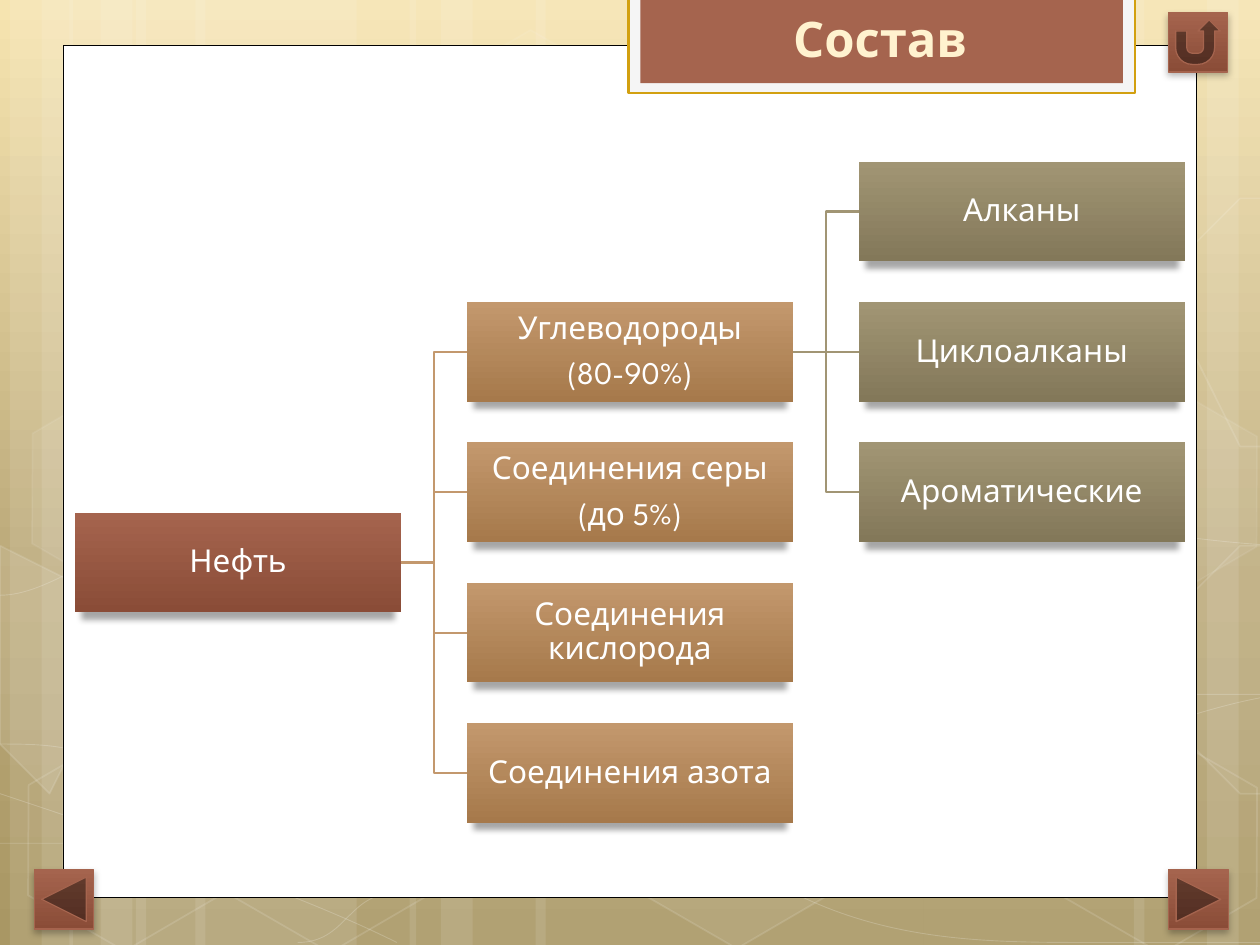
from lxml import etree
from pptx import Presentation
from pptx.dml.color import RGBColor
from pptx.enum.shapes import MSO_CONNECTOR, MSO_SHAPE
from pptx.enum.text import MSO_ANCHOR, MSO_AUTO_SIZE, PP_ALIGN
from pptx.oxml.ns import qn
from pptx.util import Cm, Pt

RECT = MSO_SHAPE.RECTANGLE
HEXAGON = MSO_SHAPE.HEXAGON
NEXT = MSO_SHAPE.ACTION_BUTTON_FORWARD_OR_NEXT
BACK = MSO_SHAPE.ACTION_BUTTON_BACK_OR_PREVIOUS
RETURN = MSO_SHAPE.ACTION_BUTTON_RETURN
ELBOW, STRAIGHT = MSO_CONNECTOR.ELBOW, MSO_CONNECTOR.STRAIGHT
CENTER, MIDDLE = PP_ALIGN.CENTER, MSO_ANCHOR.MIDDLE
LEFT_SITE, RIGHT_SITE = 1, 3
TITLE_ONLY = 5

RUST = ("A5644E", "8A4C37")
COPPER = ("C3986D", "A6794B")
OLIVE = ("A19574", "837859")
WHITE = "FFFFFF"

STRIPES = [(2.74, 4.45), (0.2, 1.27), (0.84, 2.11), (3.94, 4.45), (1.4, 1.27), (2.03, 2.11),
           (18.62, 4.45), (24.33, 1.27), (22.86, 2.11), (10.8, 7.82), (8.26, 1.27), (8.89, 2.11)]

CURVES = [
    [(0.18, 17.09), (1.55, 17.17), (2.92, 17.25), (4.83, 17.22), (6.73, 17.2), (9.09, 17.15),
     (11.63, 16.89), (14.17, 16.64), (17.78, 16.15), (20.12, 15.67), (22.43, 15.19),
     (24.82, 14.43), (25.58, 14)],
    [(0.18, 12.12), (0.91, 11.71), (1.65, 11.33), (3.07, 10.95), (4.52, 10.57), (6.58, 10.01),
     (8.81, 9.83), (11.07, 9.65), (13.82, 9.63), (16.61, 9.83), (19.41, 10.03),
     (24.05, 10.82), (25.58, 11.02)],
    [(0.15, 15.67), (3.23, 17.07), (6.27, 18.47), (8.48, 19.02)],
    [(0.18, 14.68), (0.97, 14.96), (1.78, 15.24), (3.25, 15.65), (4.72, 16.03), (6.93, 16.66),
     (9.07, 17.09), (11.18, 17.53), (13.84, 17.98), (15.95, 18.24), (18.06, 18.52),
     (20.32, 18.62), (21.67, 18.69), (22.99, 18.8), (23.34, 18.75), (24, 18.75),
     (24.66, 18.72), (25.12, 18.67), (25.58, 18.64)],
    [(6.15, 19.02), (6.6, 18.52), (7.06, 18.01), (7.67, 17.55), (8.28, 17.09), (9.14, 16.59),
     (9.86, 16.23), (10.57, 15.88), (11, 15.72), (11.94, 15.47), (12.85, 15.21),
     (14.55, 14.86), (15.44, 14.68), (16.36, 14.5), (16.48, 14.5), (17.27, 14.45),
     (18.06, 14.38), (19.3, 14.3), (20.17, 14.27), (21.06, 14.25), (22.5, 14.27),
     (22.5, 14.27), (22.5, 14.27), (24.21, 14.27), (24.21, 14.27), (24.66, 14.3),
     (25.1, 14.33), (25.55, 14.38)],
]

HEXAGONS = [(8.48, 0.91, 4, 8), (12.62, 14.96, 6, 12), (0.28, 15.01, 0, 12), (0.36, 7.92, 7, 8),
            (4.42, 15.04, 0, 12), (21.18, 15.06, 0, 12), (21.18, 7.98, 7, 8)]

CUT_HEXAGONS = [
    ([(0.2, 11.3), (0.48, 11.13), (2.44, 12.24), (2.41, 14.48), (0.51, 15.6), (0.2, 15.42)], 10),
    ([(23.52, 12.32), (25.43, 11.2), (25.63, 11.33), (25.63, 15.57), (25.45, 15.67),
      (23.52, 14.55)], 4),
    ([(23.52, 5.26), (25.43, 4.14), (25.65, 4.27), (25.63, 8.51), (25.45, 8.61),
      (23.52, 7.49)], 0),
]

FRACTIONS = [(["Углеводороды", "(80-90%)"], 1), (["Соединения серы", "(до 5%)"], 2),
             (["Соединения кислорода"], 3), (["Соединения азота"], 4)]
HYDROCARBONS = ["Алканы", "Циклоалканы", "Ароматические"]


def rgb(value):
    return RGBColor.from_string(value)


def set_alpha(parent, percent):
    clr = parent.find(".//" + qn("a:srgbClr"))
    etree.SubElement(clr, qn("a:alpha"), val=str(percent * 1000))


def set_gradient(fill, owner, stops):
    fill.gradient()
    fill.gradient_angle = 270
    gs_list = owner.find(".//" + qn("a:gsLst"))
    for gs in list(gs_list):
        gs_list.remove(gs)
    for pos, color in stops:
        gs = etree.SubElement(gs_list, qn("a:gs"), pos=str(pos * 1000))
        etree.SubElement(gs, qn("a:srgbClr"), val=color)


def add_text(tf, text, first=False, size=18, color=WHITE, bold=False, font="League Spartan",
             spacing=None, after=None):
    p = tf.paragraphs[0] if first else tf.add_paragraph()
    p.alignment = CENTER
    p.line_spacing = spacing
    p.space_after = after
    r = p.add_run()
    r.text = text
    r.font.name, r.font.size, r.font.bold = font, Pt(size), bold
    r.font.color.rgb = rgb(color)


class Deck:
    def __init__(self, prs):
        self.s = prs.slides.add_slide(prs.slide_layouts[TITLE_ONLY])

    def background(self, stops):
        set_gradient(self.s.background.fill, self.s.element, stops)

    def paint(self, sp, fill=None, alpha=100, line=None, width=1, line_alpha=100):
        sp.shadow.inherit = False
        if fill:
            sp.fill.solid()
            sp.fill.fore_color.rgb = rgb(fill)
            if alpha < 100:
                set_alpha(sp.element.spPr.find(qn("a:solidFill")), alpha)
        else:
            sp.fill.background()
        if line:
            sp.line.color.rgb = rgb(line)
            sp.line.width = Pt(width)
            if line_alpha < 100:
                set_alpha(sp.element.spPr.find(qn("a:ln")), line_alpha)
        else:
            sp.line.fill.background()
        return sp

    def shape(self, kind, x, y, w, h, **style):
        sp = self.s.shapes.add_shape(kind, Cm(x), Cm(y), Cm(w), Cm(h))
        return self.paint(sp, **style)

    def raised(self, kind, x, y, w, h, colors, alpha, blur, dist, scale=100, **style):
        sp = self.shape(kind, x, y, w, h, **style)
        set_gradient(sp.fill, sp.element.spPr, zip((0, 100), colors))
        effects = sp.element.spPr.find(qn("a:effectLst"))
        shadow = etree.SubElement(effects, qn("a:outerShdw"), blurRad=str(Pt(blur)),
                                  dist=str(Pt(dist)), dir="5400000", sx=str(scale * 1000),
                                  algn="b", rotWithShape="0")
        etree.SubElement(shadow, qn("a:srgbClr"), val="000000")
        set_alpha(shadow, alpha)
        return sp

    def outline(self, points, close, **style):
        fb = self.s.shapes.build_freeform(*points[0], scale=Cm(1))
        fb.add_line_segments(points[1:], close=close)
        return self.paint(fb.convert_to_shape(), **style)

    def curve(self, points, **style):
        sp = self.outline(points, False, **style)
        geometry = sp.element.spPr.find(".//" + qn("a:path"))
        lines = geometry.findall(qn("a:lnTo"))
        for i in range(0, len(lines), 3):
            bezier = etree.SubElement(geometry, qn("a:cubicBezTo"))
            for ln in lines[i:i + 3]:
                bezier.append(ln[0])
                geometry.remove(ln)

    def node(self, lines, col, row, colors):
        sp = self.raised(RECT, 1.51 + 7.9 * col, 3.26 + 2.83 * row, 6.58, 2.01, colors,
                         alpha=34, blur=3.5, dist=4, scale=96)
        tf = sp.text_frame
        tf.word_wrap = True
        tf.vertical_anchor = MIDDLE
        tf.margin_left = tf.margin_right = tf.margin_top = tf.margin_bottom = Cm(0.03)
        for i, line in enumerate(lines):
            add_text(tf, line, first=i == 0, spacing=0.9, after=Pt(6.3))
        return sp

    def branch(self, parent, child, color):
        kind = STRAIGHT if parent.top == child.top else ELBOW
        cn = self.s.shapes.add_connector(kind, 0, 0, 0, 0)
        cn.begin_connect(parent, RIGHT_SITE)
        cn.end_connect(child, LEFT_SITE)
        cn.line.color.rgb = rgb(color)
        cn.line.width = Pt(1.25)
        etree.SubElement(cn.element.spPr, qn("a:effectLst"))

    def title(self, text, x, y, w, h):
        sp = self.s.shapes.title
        sp.left, sp.top, sp.width, sp.height = Cm(x), Cm(y), Cm(w), Cm(h)
        tf = sp.text_frame
        tf.word_wrap = False
        tf.auto_size = MSO_AUTO_SIZE.SHAPE_TO_FIT_TEXT
        add_text(tf, text, first=True, size=28, color="FFF2CF", bold=True)
        sp.element.getparent().append(sp.element)

    def button(self, kind, x, y):
        self.raised(kind, x, y, 1.2, 1.2, RUST, alpha=28, blur=4, dist=2, line=RUST[0], width=0.75)


def main():
    prs = Presentation()
    prs.slide_width, prs.slide_height = Cm(25.4), Cm(19.05)
    deck = Deck(prs)

    deck.background([(0, "F6E4B0"), (62, "BAA878"), (100, "A99764")])
    for x, w in STRIPES:
        deck.shape(RECT, x, 0, w, 19.05, fill=WHITE, alpha=10)
    for points in CURVES:
        deck.curve(points, line=WHITE, width=0.5, line_alpha=20)
    for x, y, alpha, line_alpha in HEXAGONS:
        sp = deck.shape(HEXAGON, x, y, 4.45, 3.86, fill=WHITE if alpha else None, alpha=alpha,
                        line=WHITE, line_alpha=line_alpha)
        sp.adjustments[0] = 0.285
        sp.rotation = 30
    for points, alpha in CUT_HEXAGONS:
        deck.outline(points, True, fill=WHITE if alpha else None, alpha=alpha,
                     line=WHITE, line_alpha=12)

    deck.shape(RECT, 1.27, 0.91, 22.86, 17.18, fill=WHITE, line="000000", width=0.5)
    deck.shape(RECT, 12.67, -0.05, 10.22, 1.93, fill="F5F5F5", line="D2A010", width=1.25)
    deck.shape(RECT, 12.91, -0.05, 9.73, 1.73, fill=RUST[0])
    deck.title("Состав", 15.6, 0.03, 4.29, 1.45)

    oil = deck.node(["Нефть"], 0, 2.5, RUST)
    fractions = [deck.node(lines, 1, row, COPPER) for lines, row in FRACTIONS]
    for sp in fractions:
        deck.branch(oil, sp, COPPER[0])
    for row, name in enumerate(HYDROCARBONS):
        deck.branch(fractions[0], deck.node([name], 2, row, OLIVE), OLIVE[0])

    deck.button(NEXT, 23.56, 17.53)
    deck.button(RETURN, 23.55, 0.25)
    deck.button(BACK, 0.69, 17.53)
    prs.save("out.pptx")


if __name__ == "__main__":
    main()
